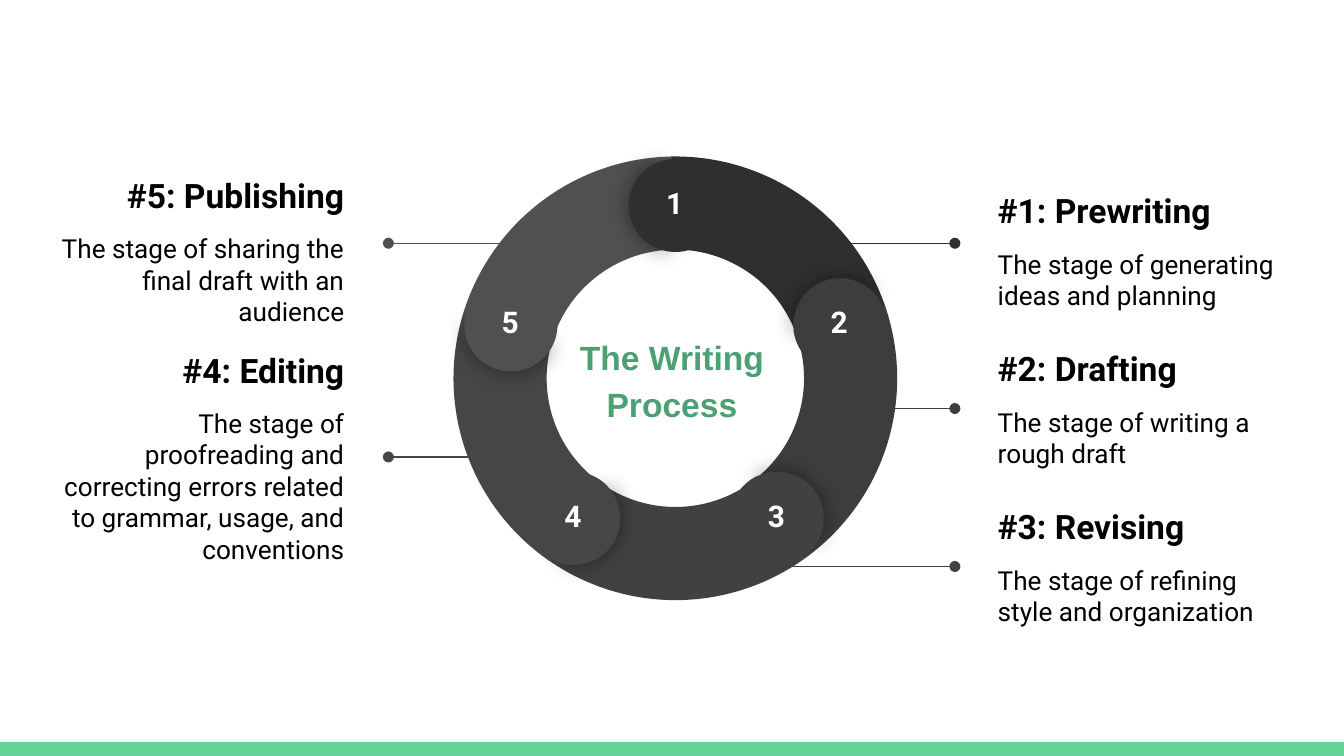
from math import cos, radians, sin

from lxml import etree
from pptx import Presentation
from pptx import util as u
from pptx.dml.color import RGBColor
from pptx.enum import shapes, text
from pptx.oxml.ns import qn

COLS, ROWS = 100, 56.25
CELL = u.Inches(0.1)
MSO, AL, ANC = shapes.MSO_SHAPE, text.PP_ALIGN, text.MSO_ANCHOR
ARC = (125.2, 168.7, 0.21)
SHADED_CAP, PLAIN_CAP = (61.9, 149.96), (40.28, 171.84)
STAGES = [
    ("#1: Prewriting", "The stage of generating ideas and planning",
     "2F2F2F", (73.25, 13.6), (57, 18.1)),
    ("#2: Drafting", "The stage of writing a rough draft",
     "3D3D3D", (73.25, 25.35), (61.4, 30.4)),
    ("#3: Revising", "The stage of refining style and organization",
     "414141", (73.25, 37.1), (50.9, 42.15)),
    ("#4: Editing", "The stage of proofreading and correcting errors "
     "related to grammar, usage, and conventions",
     "464646", (3.4, 28.95), (39.1, 34)),
    ("#5: Publishing", "The stage of sharing the final draft with an audience",
     "505050", (3.4, 13.6), (42.3, 18.1)),
]


def color(value):
    """Turn a hex string into a colour."""
    return RGBColor.from_string(value)


def grid(*cells):
    """Convert grid cells to slide lengths."""
    return [u.Emu(round(c * CELL)) for c in cells]


def style(obj, **values):
    """Set each given attribute on an object."""
    for name, value in values.items():
        setattr(obj, name, value)


def write(p, words, size, ink, font="Roboto", bold=True, **layout):
    """Write one formatted run into a paragraph."""
    r = p.add_run()
    r.text = words
    style(r.font, name=font, size=u.Pt(size), bold=bold)
    r.font.color.rgb = color(ink)
    style(p, **layout)


def frame(sp, anchor=ANC.TOP):
    """Prepare a wrapping text frame with even insets."""
    tf = sp.text_frame
    style(tf, word_wrap=True, auto_size=text.MSO_AUTO_SIZE.NONE,
          vertical_anchor=anchor, margin_left=CELL, margin_right=CELL,
          margin_top=CELL, margin_bottom=CELL)
    return tf


def add_effects(sp, shaded=False):
    """Give a shape an effect list, with a soft shadow if asked."""
    effects = etree.SubElement(sp._element.spPr, qn("a:effectLst"))
    if shaded:
        shadow = etree.SubElement(effects, qn("a:outerShdw"),
                                  blurRad=str(u.Pt(11.2)), rotWithShape="0")
        ink = etree.SubElement(shadow, qn("a:srgbClr"), val="000000")
        etree.SubElement(ink, qn("a:alpha"), val="43000")


def add_solid(s, kind, box, fill, adjust=(), turn=0, shaded=False):
    """Add a filled shape without outline."""
    sp = s.shapes.add_shape(kind, *grid(*box))
    sp.fill.solid()
    sp.fill.fore_color.rgb = color(fill)
    sp.line.fill.background()
    sp.rotation = turn % 360
    for i, value in enumerate(adjust):
        sp.adjustments[i] = value
    add_effects(sp, shaded)


def add_title(s, box):
    """Place the slide title inside the ring."""
    title = s.shapes.title
    style(title, **dict(zip(("left", "top", "width", "height"), grid(*box))))
    write(frame(title).paragraphs[0], "The Writing Process", 18, "4BA173",
          "Arial", alignment=AL.CENTER, line_spacing=1.15,
          space_after=u.Pt(12))


def add_stage(s, heading, detail, box, align):
    """Add a stage heading with its description."""
    tf = frame(s.shapes.add_textbox(*grid(*box)), ANC.MIDDLE)
    write(tf.paragraphs[0], heading, 18, "000000",
          alignment=align, space_after=u.Pt(9.4))
    write(tf.add_paragraph(), detail, 14, "000000", bold=False, alignment=align)


def add_leader(s, start, end, ink):
    """Add a line from the ring that ends in a dot."""
    line = s.shapes.add_connector(shapes.MSO_CONNECTOR.STRAIGHT,
                                  *grid(*start, *end))
    line.line.color.rgb = color(ink)
    line.line.width = u.Pt(0.75)
    etree.SubElement(line.line._get_or_add_ln(), qn("a:tailEnd"), type="oval")
    add_effects(line)


def add_ring(s, box, inks):
    """Draw the numbered ring of overlapping segments."""
    x, y, w, h = box
    cap, radius, step = 0.21 * w, 0.39 * w, 360 / len(inks)
    for i, ink in enumerate(inks):
        add_solid(s, MSO.BLOCK_ARC, box, ink, ARC, 60 + step * i)
    for i, ink in enumerate(inks):
        angle = radians(step * i - 90)
        cx = x + w / 2 + radius * cos(angle)
        cy = y + h / 2 + radius * sin(angle)
        spot = (cx - cap / 2, cy - cap / 2, cap, cap)
        turn = step * i - 4
        add_solid(s, MSO.PIE, spot, ink, SHADED_CAP, turn, True)
        add_solid(s, MSO.PIE, spot, ink, PLAIN_CAP, turn + 179.3)
        label = s.shapes.add_textbox(*grid(cx - 3.1, cy - 2.55, 6.1, 3.2))
        write(frame(label).paragraphs[0], str(i + 1), 16, "FFFFFF",
              alignment=AL.CENTER)


def main():
    """Build and save the slide."""
    prs = Presentation()
    prs.slide_width, prs.slide_height = grid(COLS, ROWS)
    s = prs.slides.add_slide(prs.slide_layouts[5])
    add_solid(s, MSO.RECTANGLE, (0, ROWS - 1.05, COLS, 1.05), "63D297")
    add_title(s, (38.85, 23.65, 22.3, 9.9))
    for heading, detail, ink, (x, y), start in STAGES:
        right = x > COLS / 2
        add_leader(s, start, (71.05 if right else 28.9, start[1]), ink)
        add_stage(s, heading, detail, (x, y, 23.2, 10.1),
                  AL.LEFT if right else AL.RIGHT)
    add_ring(s, (33.75, 11.65, 33, 33), [stage[2] for stage in STAGES])
    prs.save("out.pptx")


if __name__ == "__main__":
    main()
